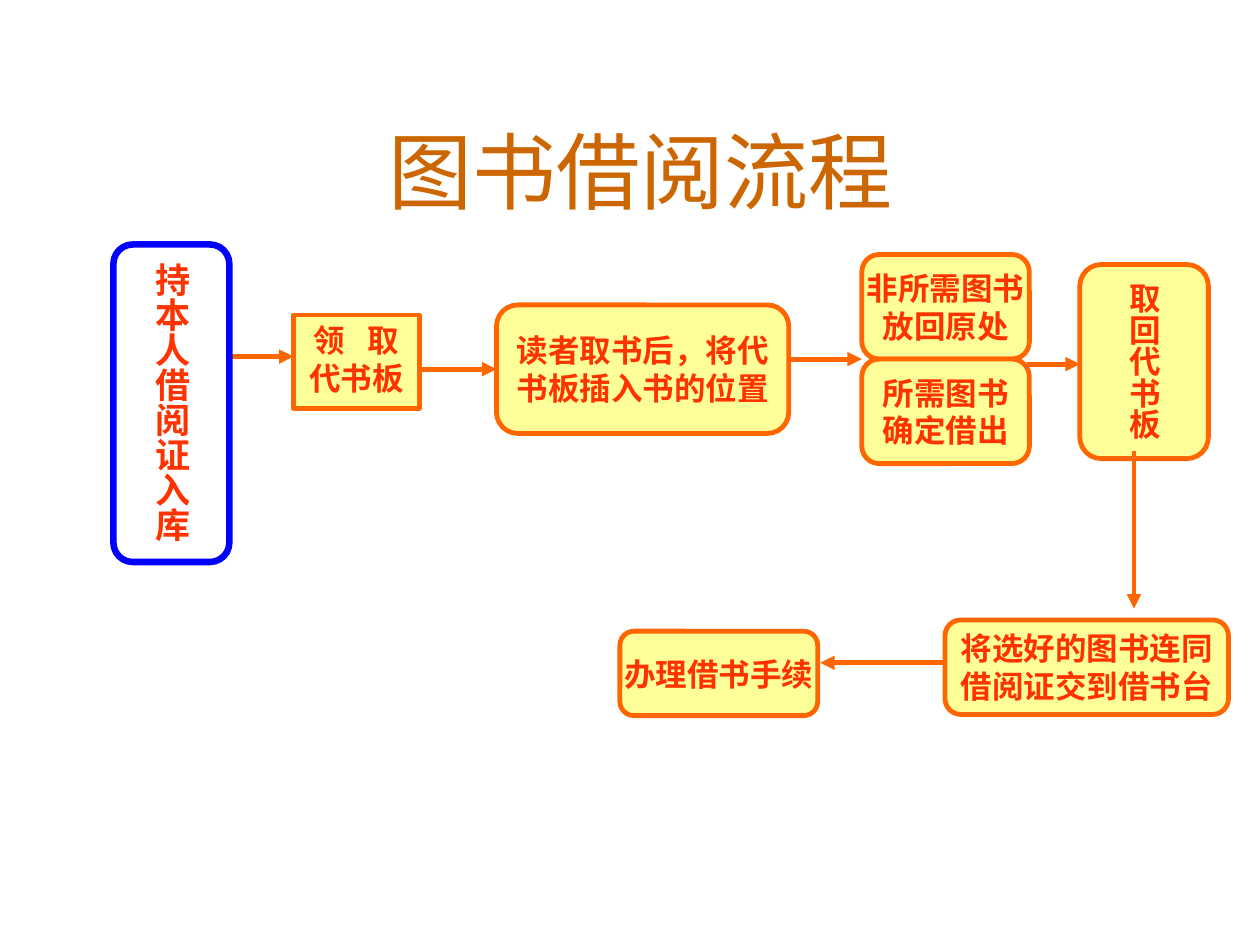
from pptx import Presentation
from pptx.dml.color import RGBColor
from pptx.enum.shapes import MSO_CONNECTOR, MSO_SHAPE
from pptx.enum.text import MSO_ANCHOR, PP_ALIGN
from pptx.oxml.ns import qn
from pptx.util import Inches, Pt
from lxml.etree import SubElement

BROWN = RGBColor(0xCC, 0x66, 0x00)
ORANGE = RGBColor(0xFF, 0x66, 0x00)
RED = RGBColor(0xFF, 0x33, 0x00)
YELLOW = RGBColor(0xFF, 0xFF, 0x99)
WHITE = RGBColor(0xFF, 0xFF, 0xFF)
BLUE = RGBColor(0x00, 0x00, 0xFF)
CJK_FONT = "Noto Sans CJK SC"
LATIN_FONT = "Times New Roman"
ROUNDED = MSO_SHAPE.FLOWCHART_ALTERNATE_PROCESS

# Steps: left, top, width, height, lines of text, vertical text
STEPS = [
    (3.94, 2.42, 2.32, 1.02, ["读者取书后，将代", "书板插入书的位置"], False),
    (6.84, 2.02, 1.33, 0.83, ["非所需图书", "放回原处"], False),
    (6.84, 2.85, 1.33, 0.83, ["所需图书", "确定借出"], False),
    (4.92, 5.01, 1.57, 0.67, ["办理借书手续"], False),
    (8.57, 2.1, 1.02, 1.54, ["取回代书板"], True),
    (7.5, 4.92, 2.25, 0.75, ["将选好的图书连同", "借阅证交到借书台"], False),
]

# Arrows: start x, start y, end x, end y
ARROWS = [
    (1.75, 2.83, 2.33, 2.83),
    (3.33, 2.93, 3.94, 2.93),
    (6.26, 2.85, 6.84, 2.85),
    (8.15, 2.89, 8.57, 2.89),
    (9, 3.58, 9, 4.83),
    (7.51, 5.26, 6.51, 5.26),
]


def add_run(p, text, size, color, font=LATIN_FONT, bold=True):
    r = p.add_run()
    r.text = text
    r.font.size = Pt(size)
    r.font.bold = bold
    r.font.color.rgb = color
    r.font.name = font
    SubElement(r.font._element, qn("a:ea")).set("typeface", CJK_FONT)
    return r


def add_title(slide, text):
    title = slide.shapes.title
    title.left, title.top = Inches(2.4), Inches(1.07)
    title.width, title.height = Inches(5.37), Inches(0.56)
    tf = title.text_frame
    tf.vertical_anchor = MSO_ANCHOR.MIDDLE
    p = tf.paragraphs[0]
    p.alignment = PP_ALIGN.CENTER
    add_run(p, text, 48, BROWN, CJK_FONT, bold=False)


def add_step(slide, x, y, w, h, lines, vertical=False, shape=ROUNDED,
             fill=YELLOW, line=ORANGE, weight=2.75, size=18):
    sp = slide.shapes.add_shape(shape, Inches(x), Inches(y), Inches(w), Inches(h))
    sp.shadow.inherit = False
    sp.fill.solid()
    sp.fill.fore_color.rgb = fill
    sp.line.color.rgb = line
    sp.line.width = Pt(weight)
    tf = sp.text_frame
    tf.word_wrap = False
    tf.vertical_anchor = MSO_ANCHOR.MIDDLE
    if vertical:
        tf._txBody.bodyPr.set("vert", "eaVert")
    for i, text in enumerate(lines):
        p = tf.add_paragraph() if i else tf.paragraphs[0]
        p.alignment = PP_ALIGN.CENTER
        add_run(p, text, size, RED)
    return sp


def add_card_step(slide):
    """Square-cornered step whose first line is spread apart."""
    sp = add_step(slide, 2.33, 2.5, 1, 0.74, ["领", "代书板"], shape=MSO_SHAPE.RECTANGLE)
    tf = sp.text_frame
    tf.word_wrap = True
    tf.vertical_anchor = MSO_ANCHOR.TOP
    p = tf.paragraphs[0]
    gap = add_run(p, " ", 18, RED)
    gap.font._element.set("spc", "900")
    add_run(p, "取", 18, RED)


def add_arrow(slide, x1, y1, x2, y2):
    line = slide.shapes.add_connector(
        MSO_CONNECTOR.STRAIGHT, Inches(x1), Inches(y1), Inches(x2), Inches(y2))
    line.line.color.rgb = ORANGE
    line.line.width = Pt(2.75)
    SubElement(line.line._get_or_add_ln(), qn("a:tailEnd")).set("type", "triangle")
    SubElement(line._element.spPr, qn("a:effectLst"))


def main():
    prs = Presentation()
    prs.slide_width, prs.slide_height = Inches(10), Inches(7.5)
    slide = prs.slides.add_slide(prs.slide_layouts[5])
    add_title(slide, "图书借阅流程")

    # Steps and the arrows between them
    add_card_step(slide)
    for step in STEPS:
        add_step(slide, *step)
    for arrow in ARROWS:
        add_arrow(slide, *arrow)

    # Starting step covers the tail of the first arrow
    add_step(slide, 0.9, 1.94, 0.92, 2.52, ["持本人借阅证入库"], vertical=True,
             fill=WHITE, line=BLUE, weight=3.75, size=20)
    prs.save("out.pptx")


if __name__ == "__main__":
    main()
